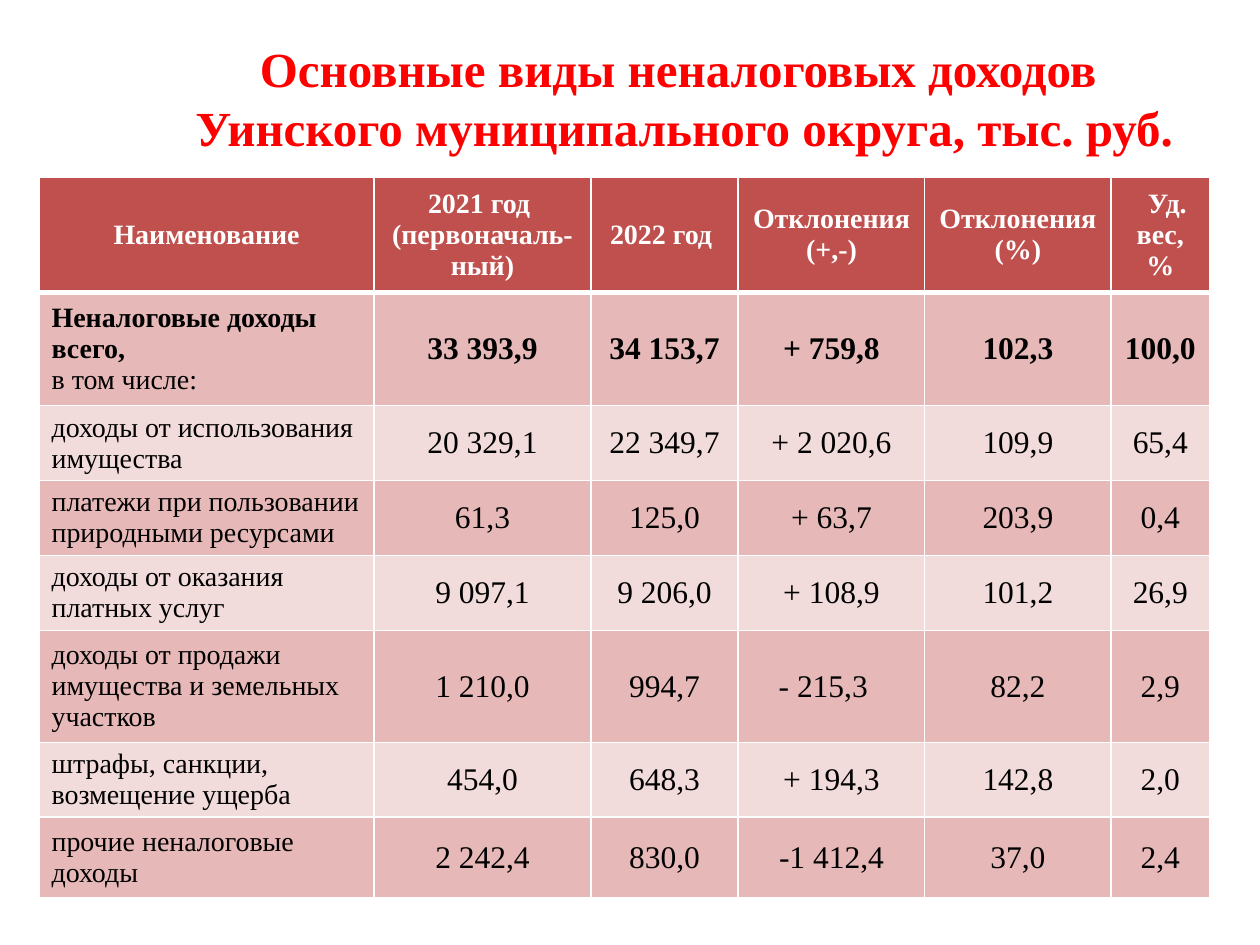
from lxml.etree import SubElement
from pptx import Presentation
from pptx.dml.color import RGBColor
from pptx.enum.text import MSO_ANCHOR, MSO_AUTO_SIZE, PP_ALIGN
from pptx.oxml import parse_xml
from pptx.oxml.ns import qn
from pptx.util import Inches, Pt

FONT = "Times New Roman"
RED = RGBColor(0xFF, 0x00, 0x00)
WHITE = RGBColor(0xFF, 0xFF, 0xFF)
BLACK = RGBColor(0x00, 0x00, 0x00)
HEADER = RGBColor(0xC0, 0x50, 0x4D)
BANDS = (RGBColor(0xE6, 0xB9, 0xB8), RGBColor(0xF2, 0xDC, 0xDB))

TITLE = ("Основные виды неналоговых доходов ",
         "Уинского муниципального округа, тыс. руб.")
COLS = (2.66, 1.72, 1.17, 1.48, 1.48, 0.78)
ROWS = (0.91, 0.9, 0.49, 0.56, 0.47, 0.89, 0.5, 0.64)
# A line feed inside a cell starts a new paragraph
DATA = (
    ("Наименование", "2021 год \n(первоначаль-ный)", "2022 год ",
     "Отклонения (+,-)", "Отклонения (%)", "Уд. вес, %"),
    ("Неналоговые доходы всего,\nв том числе:",
     "33 393,9", "34 153,7", "+ 759,8", "102,3", "100,0"),
    ("доходы от использования имущества",
     "20 329,1", "22 349,7", "+ 2 020,6", "109,9", "65,4"),
    ("платежи при пользовании природными ресурсами",
     "61,3", "125,0", "+ 63,7", "203,9", "0,4"),
    ("доходы от оказания платных услуг",
     "9 097,1", "9 206,0", "+ 108,9", "101,2", "26,9"),
    ("доходы от продажи имущества и земельных участков",
     "1 210,0", "994,7", "- 215,3", "82,2", "2,9"),
    ("штрафы, санкции, возмещение ущерба",
     "454,0", "648,3", "+ 194,3", "142,8", "2,0"),
    ("прочие неналоговые доходы",
     "2 242,4", "830,0", "-1 412,4", "37,0", "2,4"),
)
SHADOW = (
    '<a:effectLst xmlns:a="http://schemas.openxmlformats.org/drawingml/2006/main">'
    '<a:outerShdw blurRad="38100" dist="38100" dir="2700000" algn="tl">'
    '<a:srgbClr val="000000"><a:alpha val="43000"/></a:srgbClr>'
    '</a:outerShdw></a:effectLst>')


def add_run(p, text, size, color, bold):
    r = p.add_run()
    r.text = text
    r.font.size = Pt(size)
    r.font.bold = bold
    r.font.color.rgb = color
    r.font.name = FONT
    return r


def add_title(s, box):
    sp = s.shapes.title
    sp.left, sp.top, sp.width, sp.height = (Inches(v) for v in box)
    tf = sp.text_frame
    tf.word_wrap = True
    tf.auto_size = MSO_AUTO_SIZE.NONE
    tf.vertical_anchor = MSO_ANCHOR.MIDDLE
    p = tf.paragraphs[0]
    p.alignment = PP_ALIGN.CENTER
    for i, line in enumerate(TITLE):
        if i:
            p.add_line_break()
        r = add_run(p, line, 28, RED, True)
        r.font.fill._xPr.find(qn("a:solidFill")).addnext(parse_xml(SHADOW))


def set_borders(cell, header):
    tc_pr = cell._tc.get_or_add_tcPr()
    for side in ("lnL", "lnR", "lnT", "lnB"):
        width = 3 if header and side == "lnB" else 1
        ln = SubElement(tc_pr, qn(f"a:{side}"), w=str(Pt(width)))
        fill = SubElement(ln, qn("a:solidFill"))
        SubElement(fill, qn("a:srgbClr"), val=str(WHITE))


def fill_cell(cell, text, row, col):
    header = row == 0
    set_borders(cell, header)
    cell.fill.solid()
    cell.fill.fore_color.rgb = HEADER if header else BANDS[(row - 1) % 2]
    cell.vertical_anchor = MSO_ANCHOR.MIDDLE
    tf = cell.text_frame
    for i, line in enumerate(text.split("\n")):
        p = tf.add_paragraph() if i else tf.paragraphs[0]
        p.alignment = PP_ALIGN.CENTER if header or col else PP_ALIGN.LEFT
        size = 16 if header or col == 0 else 18
        # Header and the total row are bold, except the note under the total
        bold = header or (row == 1 and i == 0)
        add_run(p, line, size, WHITE if header else BLACK, bold)


def add_income_table(s, box):
    frame = s.shapes.add_table(len(ROWS), len(COLS), *(Inches(v) for v in box))
    table = frame.table
    for column, width in zip(table.columns, COLS):
        column.width = Inches(width)
    for row, height in zip(table.rows, ROWS):
        row.height = Inches(height)
    for i, values in enumerate(DATA):
        for j, text in enumerate(values):
            fill_cell(table.cell(i, j), text, i, j)
    # Optical offsets: share heading to the right, negative deviation to the left
    share = table.cell(0, 5).text_frame.paragraphs[0]
    share._p.get_or_add_pPr().set("indent", str(Inches(0.11)))
    table.cell(5, 3).margin_right = Inches(0.23)


def main():
    prs = Presentation()
    prs.slide_width, prs.slide_height = Inches(10), Inches(7.5)
    s = prs.slides.add_slide(prs.slide_layouts[5])
    add_title(s, (1.33, 0.31, 8.2, 0.93))
    add_income_table(s, (0.31, 1.41, sum(COLS), sum(ROWS)))
    prs.save("out.pptx")


if __name__ == "__main__":
    main()
